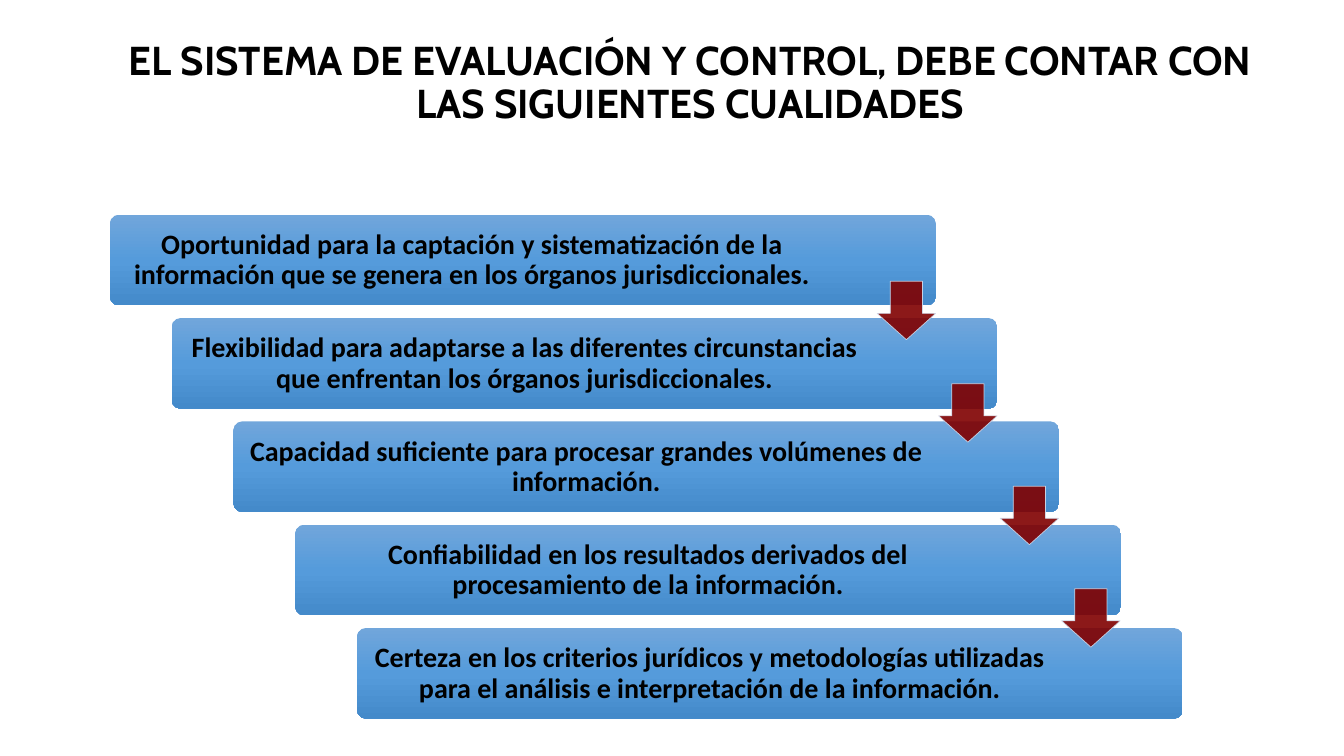
from copy import deepcopy
from dataclasses import dataclass

from lxml import etree
from pptx import Presentation
from pptx import util as u
from pptx.dml import color
from pptx.enum import shapes, text
from pptx.oxml import ns
from pptx.shapes import autoshape, shapetree
from pptx.text import text as txt

BLACK = color.RGBColor(0x00, 0x00, 0x00)
MAROON = color.RGBColor(0x80, 0x00, 0x00)
PALE_BLUE = color.RGBColor(0xD2, 0xDE, 0xEF)
BAR_GRADIENT = (
    (0, color.RGBColor(0x71, 0xA6, 0xDB)),
    (0.5, color.RGBColor(0x55, 0x9B, 0xDB)),
    (1, color.RGBColor(0x44, 0x8A, 0xCA)),
)

TITLE = "EL SISTEMA DE EVALUACIÓN Y CONTROL, DEBE CONTAR CON LAS SIGUIENTES CUALIDADES"

BAR_LEFT, BAR_TOP, BAR_WIDTH, BAR_HEIGHT = 1.09, 2.13, 8.19, 0.9
BAR_STEP_X, BAR_STEP_Y = (3.54 - BAR_LEFT) / 4, (6.23 - BAR_TOP) / 4
LABEL_OFFSET, LABEL_HEIGHT = 0.03, 0.85
ARROW_LEFT, ARROW_TOP, ARROW_SIZE = 8.7, 2.79, 0.58
ARROW_STEP_X, ARROW_STEP_Y = 0.61, (5.84 - ARROW_TOP) / 3


@dataclass(frozen=True)
class Quality:
    label: str
    label_width: float = 6.94


QUALITIES = (
    Quality("Oportunidad para la captación y sistematización de la información "
            "que se genera en los órganos jurisdiccionales.", 7.12),
    Quality("Flexibilidad para adaptarse a las diferentes circunstancias "
            "que enfrentan los órganos jurisdiccionales."),
    Quality("Capacidad suficiente para procesar grandes volúmenes de información."),
    Quality("Confiabilidad en los resultados derivados del procesamiento "
            "de la información."),
    Quality("Certeza en los criterios jurídicos y metodologías utilizadas "
            "para el análisis e interpretación de la información."),
)


def write_text(frame: txt.TextFrame, content: str, font_name: str, size: float) -> None:
    frame.text = content
    frame.word_wrap = True
    frame.auto_size = text.MSO_AUTO_SIZE.NONE
    frame.vertical_anchor = text.MSO_ANCHOR.MIDDLE
    paragraph = frame.paragraphs[0]
    paragraph.alignment = text.PP_ALIGN.CENTER
    paragraph.line_spacing = 0.9
    font = paragraph.runs[0].font
    font.name = font_name
    font.size = u.Pt(size)
    font.bold = True
    font.color.rgb = BLACK


def fill_with_gradient(shape: autoshape.Shape) -> None:
    shape.fill.gradient()
    shape.fill.gradient_angle = 270
    stop_list = shape._element.spPr.find(".//" + ns.qn("a:gsLst"))
    stop_list.insert(1, deepcopy(stop_list[0]))
    for stop, (position, rgb) in zip(shape.fill.gradient_stops, BAR_GRADIENT):
        stop.position = position
        stop.color.rgb = rgb


def add_bar(group: shapetree.GroupShapes, left: float, top: float) -> None:
    bar = group.add_shape(
        shapes.MSO_SHAPE.ROUNDED_RECTANGLE,
        u.Inches(left), u.Inches(top), u.Inches(BAR_WIDTH), u.Inches(BAR_HEIGHT))
    bar.adjustments[0] = 0.1
    bar.shadow.inherit = False
    bar.line.fill.background()
    fill_with_gradient(bar)


def add_label(group: shapetree.GroupShapes, quality: Quality,
              left: float, top: float) -> None:
    label = group.add_textbox(
        u.Inches(left), u.Inches(top),
        u.Inches(quality.label_width), u.Inches(LABEL_HEIGHT))
    frame = label.text_frame
    frame.margin_left = frame.margin_right = u.Inches(0.08)
    frame.margin_top = frame.margin_bottom = u.Inches(0.08)
    write_text(frame, quality.label, "Calibri", 20)


def add_arrow(group: shapetree.GroupShapes, left: float, top: float) -> None:
    arrow = group.add_shape(
        shapes.MSO_SHAPE.DOWN_ARROW,
        u.Inches(left), u.Inches(top), u.Inches(ARROW_SIZE), u.Inches(ARROW_SIZE))
    arrow.adjustments[0] = 0.55
    arrow.adjustments[1] = 0.45
    arrow.shadow.inherit = False
    arrow.fill.solid()
    arrow.fill.fore_color.rgb = MAROON
    arrow.line.color.rgb = PALE_BLUE
    arrow.line.width = u.Pt(0.5)
    for rgb in arrow._element.spPr.iter(ns.qn("a:srgbClr")):
        etree.SubElement(rgb, ns.qn("a:alpha")).set("val", "90000")


def main() -> None:
    presentation = Presentation()
    presentation.slide_width = u.Inches(13.33)
    presentation.slide_height = u.Inches(7.5)
    slide = presentation.slides.add_slide(presentation.slide_layouts[5])

    title = slide.shapes.title
    title.left, title.top = u.Inches(1), u.Inches(0.56)
    title.width, title.height = u.Inches(11.69), u.Inches(1)
    write_text(title.text_frame, TITLE, "Cabin", 28.8)
    title.text_frame.margin_bottom = u.Inches(0.5)

    group = slide.shapes.add_group_shape().shapes
    for index, quality in enumerate(QUALITIES):
        left = BAR_LEFT + index * BAR_STEP_X
        top = BAR_TOP + index * BAR_STEP_Y
        add_bar(group, left, top)
        add_label(group, quality, left + LABEL_OFFSET, top + LABEL_OFFSET)
    for index in range(len(QUALITIES) - 1):
        add_arrow(group, ARROW_LEFT + index * ARROW_STEP_X,
                  ARROW_TOP + index * ARROW_STEP_Y)

    presentation.save("out.pptx")


if __name__ == "__main__":
    main()
